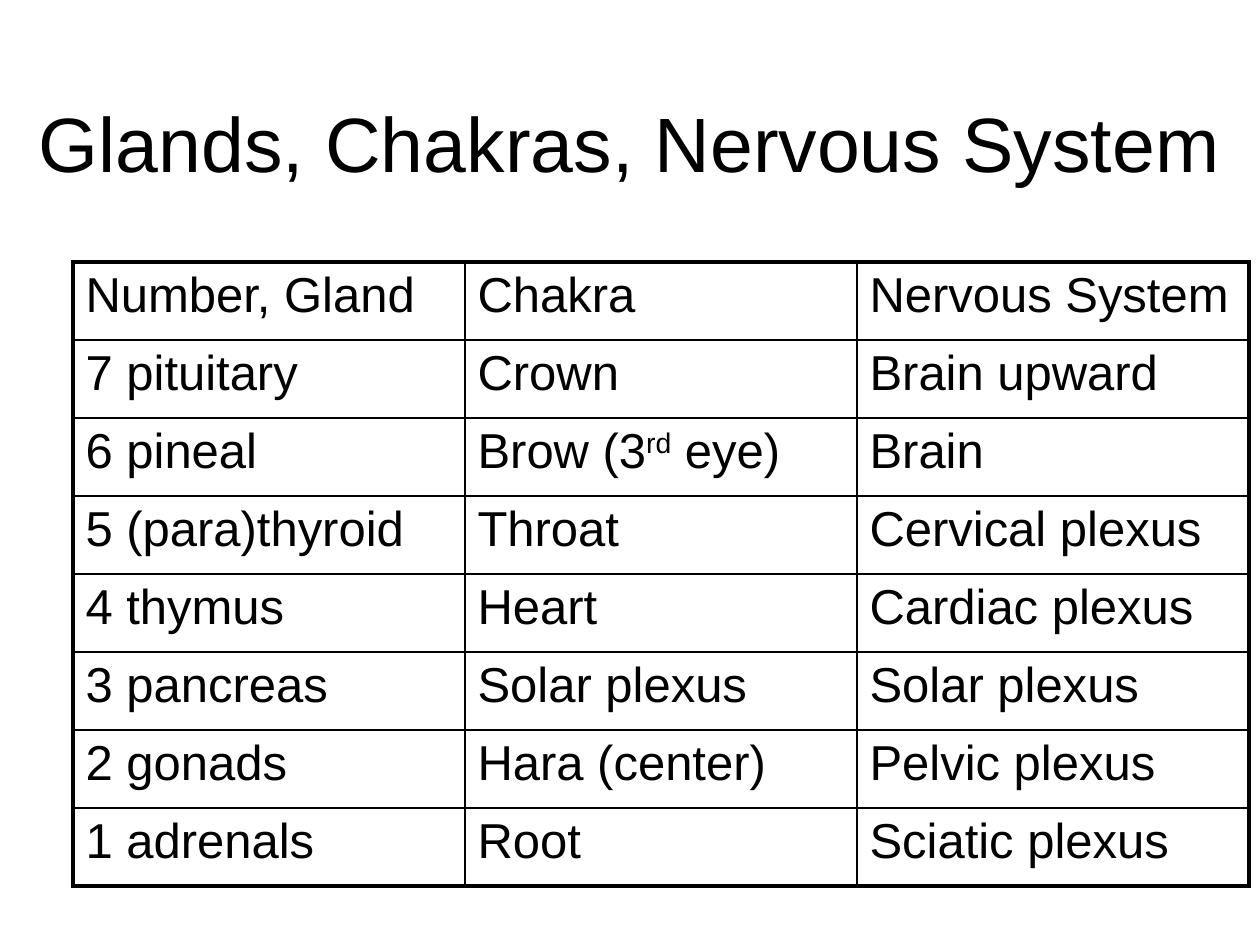
from dataclasses import dataclass

from lxml import etree
from pptx import Presentation
from pptx.dml.color import RGBColor
from pptx.enum.text import MSO_ANCHOR, PP_ALIGN
from pptx.oxml.ns import qn
from pptx.util import Emu, Pt

TITLE = "Glands, Chakras, Nervous System"
# A cell is a string, or a tuple of runs in which every second one is raised.
ROWS = [
    ("Number, Gland", "Chakra", "Nervous System"),
    ("7 pituitary", "Crown", "Brain upward"),
    ("6 pineal", ("Brow (3", "rd", " eye)"), "Brain"),
    ("5 (para)thyroid", "Throat", "Cervical plexus"),
    ("4 thymus", "Heart", "Cardiac plexus"),
    ("3 pancreas", "Solar plexus", "Solar plexus"),
    ("2 gonads", "Hara (center)", "Pelvic plexus"),
    ("1 adrenals", "Root", "Sciatic plexus"),
]

PX = 914400 // 126
PAGE_SIZE = (1260, 945)
TITLE_AREA = (21, 63, 1218, 158)
TABLE_LEFT, TABLE_TOP = 73, 262
COLUMN_WIDTH, ROW_HEIGHT = 392, 78

CENTER = PP_ALIGN.CENTER
MIDDLE = MSO_ANCHOR.MIDDLE


@dataclass(frozen=True)
class Theme:
    font: str = "Arial"
    ink: str = "000000"
    title_size: int = 44
    cell_size: int = 28
    outer_line: float = 2.25
    inner_line: float = 1


THEME = Theme()


def px(*lengths):
    return [Emu(length * PX) for length in lengths]


def add_run(para, text, size, raised=False):
    span = para.add_run()
    span.text = text
    span.font.name = THEME.font
    span.font.size = Pt(size)
    span.font.color.rgb = RGBColor.from_string(THEME.ink)
    if raised:
        span.font._element.set("baseline", "30000")


def add_border(cell, side, width):
    properties = cell._tc.get_or_add_tcPr()
    line = etree.SubElement(properties, qn(f"a:ln{side}"), w=str(Pt(width)))
    fill = etree.SubElement(line, qn("a:solidFill"))
    etree.SubElement(fill, qn("a:srgbClr"), val=THEME.ink)


def add_title(page):
    box = page.shapes.add_textbox(*px(*TITLE_AREA))
    frame = box.text_frame
    frame.word_wrap = True
    frame.vertical_anchor = MIDDLE
    para = frame.paragraphs[0]
    para.alignment = CENTER
    add_run(para, TITLE, THEME.title_size)


def add_gland_table(page):
    row_count, column_count = len(ROWS), len(ROWS[0])
    area = px(TABLE_LEFT, TABLE_TOP,
              column_count * COLUMN_WIDTH, row_count * ROW_HEIGHT)
    table = page.shapes.add_table(row_count, column_count, *area).table
    table.first_row = table.horz_banding = False
    for column in table.columns:
        column.width = px(COLUMN_WIDTH)[0]
    for r, texts in enumerate(ROWS):
        table.rows[r].height = px(ROW_HEIGHT)[0]
        for c, content in enumerate(texts):
            cell = table.cell(r, c)
            on_edge = {"L": c == 0, "R": c == column_count - 1,
                       "T": r == 0, "B": r == row_count - 1}
            for side, outer in on_edge.items():
                add_border(cell, side, THEME.outer_line if outer else THEME.inner_line)
            cell.fill.background()
            runs = (content,) if isinstance(content, str) else content
            for index, text in enumerate(runs):
                add_run(cell.text_frame.paragraphs[0], text, THEME.cell_size,
                        raised=index % 2 == 1)


def main():
    deck = Presentation()
    deck.slide_width, deck.slide_height = px(*PAGE_SIZE)
    page = deck.slides.add_slide(deck.slide_layouts[6])
    add_title(page)
    add_gland_table(page)
    deck.save("out.pptx")


if __name__ == "__main__":
    main()
